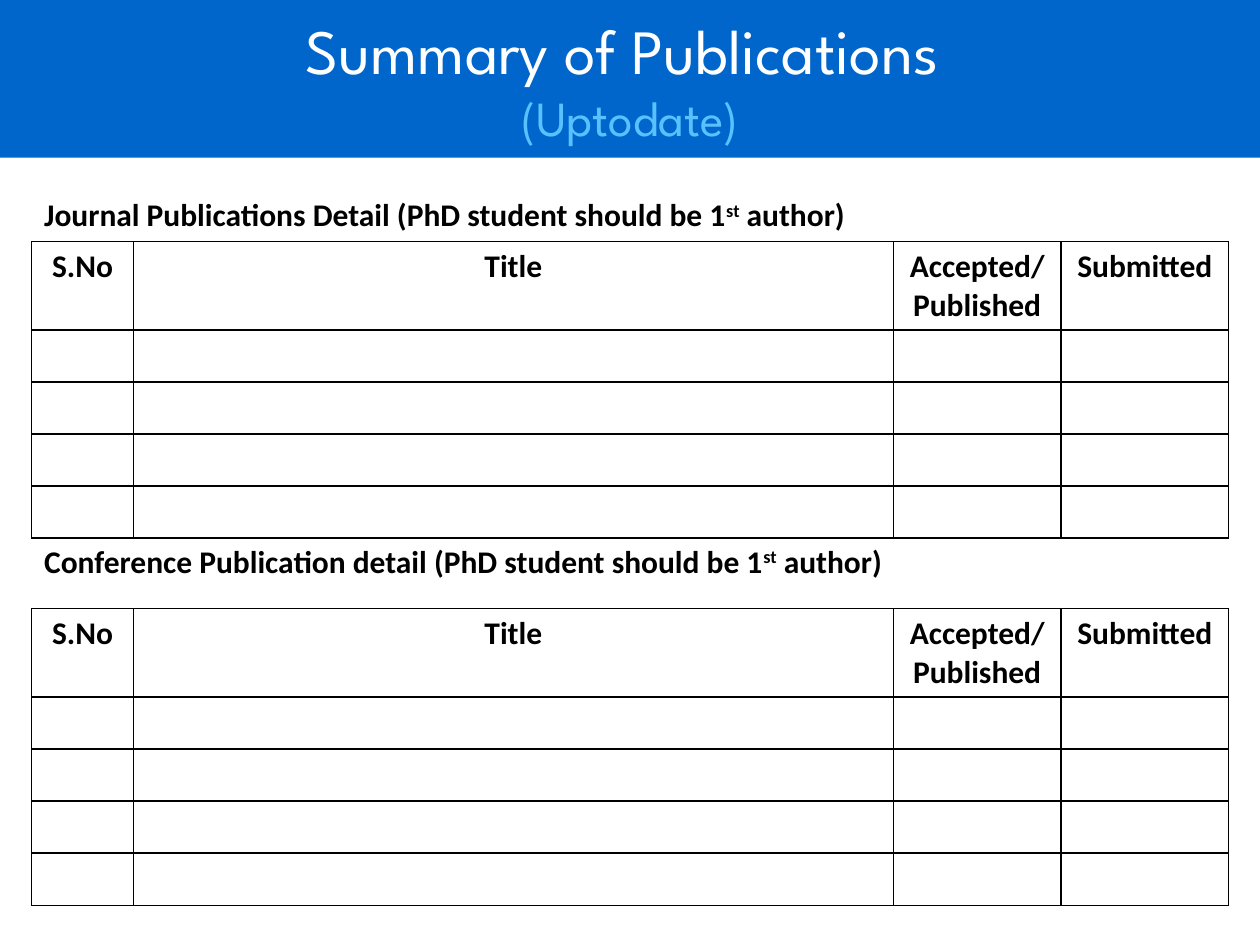
"""Build the summary slide of journal and conference publications."""
from lxml import etree
from pptx import Presentation
from pptx.dml.color import RGBColor
from pptx.enum.text import MSO_ANCHOR, MSO_AUTO_SIZE, PP_ALIGN
from pptx.oxml.ns import qn
from pptx.util import Cm, Pt

CENTER = PP_ALIGN.CENTER
MIDDLE = MSO_ANCHOR.MIDDLE
NO_AUTOFIT = MSO_AUTO_SIZE.NONE
FIT_SHAPE = MSO_AUTO_SIZE.SHAPE_TO_FIT_TEXT

BLUE = RGBColor(0x00, 0x66, 0xCC)
LIGHT_BLUE = RGBColor(0x59, 0xC1, 0xFF)
WHITE = RGBColor(0xFF, 0xFF, 0xFF)
BLACK = RGBColor(0x00, 0x00, 0x00)

LEFT = Cm(0.64)
COLUMN_WIDTHS = [Cm(2.05), Cm(15.32), Cm(3.38), Cm(3.38)]
ROW_HEIGHTS = [Cm(1.78)] + [Cm(1.05)] * 4
HEADERS = ["S.No", "Title", "Accepted/Published", "Submitted"]
SECTIONS = [
    ("Journal Publications Detail (PhD student should be 1", Cm(3.81), Cm(17.15), Cm(4.87)),
    ("Conference Publication detail (PhD student should be 1", Cm(10.8), Cm(19.05), Cm(12.27)),
]


def set_font(paragraph, name, size, color, bold):
    font = paragraph.font
    font.name = name
    font.size = Pt(size)
    font.color.rgb = color
    font.bold = bold


def add_borders(cell):
    properties = cell._tc.get_or_add_tcPr()
    for side in ("a:lnL", "a:lnR", "a:lnT", "a:lnB"):
        line = etree.SubElement(properties, qn(side), w=str(Pt(1)))
        fill = etree.SubElement(line, qn("a:solidFill"))
        etree.SubElement(fill, qn("a:srgbClr"), val=str(BLACK))


presentation = Presentation()
presentation.slide_width = Cm(25.4)
presentation.slide_height = Cm(19.05)
slide = presentation.slides.add_slide(presentation.slide_layouts[5])

banner = slide.shapes.title
banner.left, banner.top = Cm(0), Cm(0)
banner.width, banner.height = presentation.slide_width, Cm(3.18)
banner.fill.solid()
banner.fill.fore_color.rgb = BLUE
banner_text = banner.text_frame
banner_text.text = "Summary of Publications \n(Uptodate)"
banner_text.auto_size = NO_AUTOFIT
banner_text.vertical_anchor = MIDDLE
for paragraph, size, color in zip(banner_text.paragraphs, (36, 28), (WHITE, LIGHT_BLUE)):
    paragraph.alignment = CENTER
    set_font(paragraph, "League Spartan", size, color, False)

for heading, heading_top, heading_width, table_top in SECTIONS:
    heading_box = slide.shapes.add_textbox(LEFT, heading_top, heading_width, Cm(1.03))
    heading_text = heading_box.text_frame
    heading_text.word_wrap = True
    heading_text.auto_size = FIT_SHAPE
    heading_line = heading_text.paragraphs[0]
    set_font(heading_line, "Calibri", 18, BLACK, True)
    heading_line.add_run().text = heading
    ordinal = heading_line.add_run()
    ordinal.text = "st"
    ordinal.font._element.set("baseline", "30000")
    heading_line.add_run().text = " author)"

    publications = slide.shapes.add_table(
        len(ROW_HEIGHTS), len(HEADERS), LEFT, table_top, sum(COLUMN_WIDTHS), sum(ROW_HEIGHTS)
    ).table
    for column, width in zip(publications.columns, COLUMN_WIDTHS):
        column.width = width
    for row, height in zip(publications.rows, ROW_HEIGHTS):
        row.height = height
    for cell in publications.iter_cells():
        add_borders(cell)
        cell.fill.background()
    for column_index, header in enumerate(HEADERS):
        header_cell = publications.cell(0, column_index)
        header_cell.text = header
        header_line = header_cell.text_frame.paragraphs[0]
        header_line.alignment = CENTER
        set_font(header_line, "Calibri", 18, BLACK, True)

presentation.save("out.pptx")
